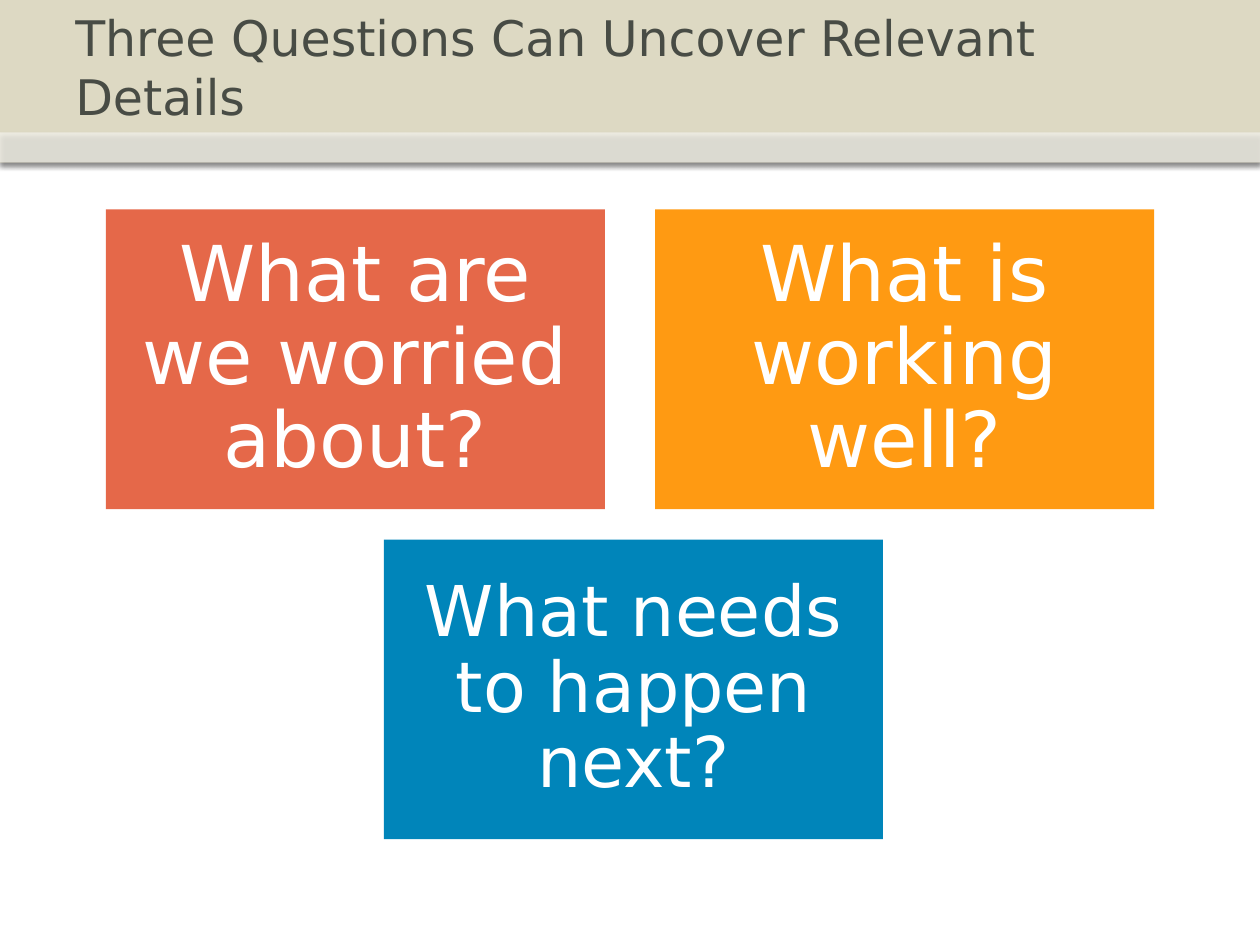
from lxml.etree import SubElement
from pptx import Presentation
from pptx.dml.color import RGBColor
from pptx.enum.shapes import MSO_SHAPE
from pptx.enum.text import MSO_ANCHOR, PP_ALIGN
from pptx.oxml.ns import qn
from pptx.util import Pt

TITLE = "Three Questions Can Uncover Relevant Details"
QUESTIONS = [
    [("What are we worried about?", "E56849", 44, 13),
     ("What is working well?", "FF9A12", 44, 13)],
    [("What needs to happen next?", "0085BA", 40, 12.2)],
]
FONT = "DejaVu Sans"
SLIDE_W, SLIDE_H = 720, 540
HEADER_H, STRIP_TOP = 92.9, 75.6
CARD_W, CARD_H = 285.2, 171.2
CARD_TOP, GAP_X, GAP_Y = 119.7, 28.6, 17.5
ROW_CENTERS = [360, 362]


def color(value):
    return RGBColor.from_string(value)


def add_block(slide, left, top, width, height, fill):
    block = slide.shapes.add_shape(
        MSO_SHAPE.RECTANGLE, Pt(left), Pt(top), Pt(width), Pt(height))
    block.shadow.inherit = False
    block.fill.solid()
    block.fill.fore_color.rgb = color(fill)
    block.line.fill.background()
    return block


def set_alpha(color_element, percent):
    SubElement(color_element, qn("a:alpha"), val=str(percent * 1000))


def add_shadow(block):
    effects = block._element.spPr.find(qn("a:effectLst"))
    shadow = SubElement(
        effects, qn("a:outerShdw"), blurRad=str(Pt(3.1)), dist=str(Pt(1.8)),
        dir="5400000", rotWithShape="0")
    set_alpha(SubElement(shadow, qn("a:srgbClr"), val="000000"), 35)


def write(frame, text, size, fill):
    frame.word_wrap = True
    frame.vertical_anchor = MSO_ANCHOR.MIDDLE
    paragraph = frame.paragraphs[0]
    run = paragraph.add_run()
    run.text = text
    run.font.name = FONT
    run.font.size = Pt(size)
    run.font.color.rgb = color(fill)
    return paragraph


def add_header(slide):
    band = add_block(slide, 0, 0, SLIDE_W, HEADER_H, "DDD9C3")
    strip = add_block(slide, 0, STRIP_TOP, SLIDE_W, HEADER_H - STRIP_TOP, "FFFFFF")
    set_alpha(strip._element.spPr.find(qn("a:solidFill"))[0], 53)
    for part in (band, strip):
        add_shadow(part)
    title = slide.shapes.add_textbox(Pt(36), Pt(0), Pt(648), Pt(STRIP_TOP))
    write(title.text_frame, TITLE, 28, "484C45").alignment = PP_ALIGN.LEFT


def add_card(slide, left, top, question, fill, size, inset):
    card = add_block(slide, left, top, CARD_W, CARD_H, fill)
    frame = card.text_frame
    frame.margin_left = frame.margin_right = Pt(inset)
    frame.margin_top = frame.margin_bottom = Pt(inset)
    paragraph = write(frame, question, size, "FFFFFF")
    paragraph.alignment = PP_ALIGN.CENTER
    paragraph.line_spacing = 0.9


def main():
    deck = Presentation()
    deck.slide_width, deck.slide_height = Pt(SLIDE_W), Pt(SLIDE_H)
    slide = deck.slides.add_slide(deck.slide_layouts[6])
    add_header(slide)
    for row, (questions, center) in enumerate(zip(QUESTIONS, ROW_CENTERS)):
        row_width = len(questions) * (CARD_W + GAP_X) - GAP_X
        top = CARD_TOP + row * (CARD_H + GAP_Y)
        for column, question in enumerate(questions):
            left = center - row_width / 2 + column * (CARD_W + GAP_X)
            add_card(slide, left, top, *question)
    deck.save("out.pptx")


if __name__ == "__main__":
    main()
